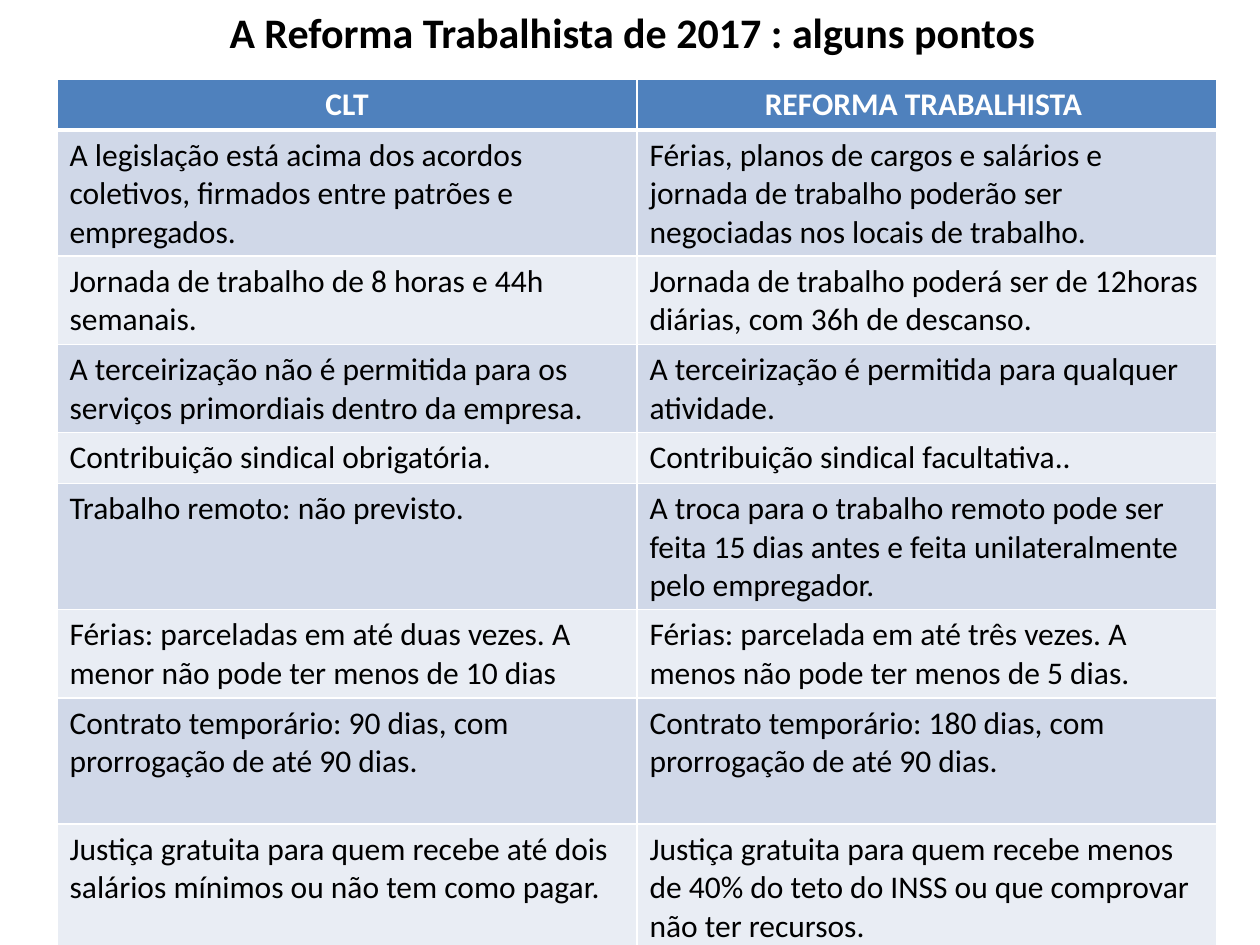
from lxml import etree
from pptx import Presentation
from pptx import util as u
from pptx.dml import color
from pptx.enum import text
from pptx.oxml import ns

PX_PER_INCH = 126
FONT = "Calibri"
WHITE, BLACK = "FFFFFF", "000000"
HEADER_FILL = "4F81BD"
BAND_FILLS = ["D0D8E8", "E9EDF4"]

TITLE = "A Reforma Trabalhista de 2017 : alguns pontos"
HEADERS = ("CLT", "REFORMA TRABALHISTA ")
HEADER_HEIGHT = 51
# Height in px, rule under the CLT, rule after the reform
RULES = [
    (126, "A legislação está acima dos acordos coletivos, firmados entre patrões e empregados.",
     "Férias, planos de cargos e salários e jornada de trabalho poderão ser negociadas nos locais de trabalho."),
    (88, "Jornada de trabalho de 8 horas e 44h semanais.",
     "Jornada de trabalho poderá ser de 12horas diárias, com 36h de descanso."),
    (88, "A terceirização não é permitida para os serviços primordiais dentro da empresa.",
     "A terceirização é permitida para qualquer atividade."),
    (51, "Contribuição sindical obrigatória.",
     "Contribuição sindical facultativa.."),
    (126, "Trabalho remoto: não previsto.",
     "A troca para o trabalho remoto pode ser feita 15 dias antes e feita unilateralmente pelo empregador."),
    (88, "Férias: parceladas em até duas vezes. A menor não pode ter menos de 10 dias",
     "Férias: parcelada em até três vezes. A menos não pode ter menos de 5 dias."),
    (126, "Contrato temporário: 90 dias, com prorrogação de até 90 dias.",
     "Contrato temporário: 180 dias, com prorrogação de até 90 dias."),
    (126, "Justiça gratuita para quem recebe até dois salários mínimos ou não tem como pagar.",
     "Justiça gratuita para quem recebe menos de 40% do teto do INSS ou que comprovar não ter recursos."),
]


def px(length):
    return u.Emu(round(length * u.Inches(1) / PX_PER_INCH))


def rgb(value):
    return color.RGBColor.from_string(value)


def format_paragraph(paragraph, size, ink, bold=False, centred=False):
    paragraph.alignment = text.PP_ALIGN.CENTER if centred else text.PP_ALIGN.LEFT
    font = paragraph.font
    font.name, font.size, font.bold = FONT, u.Pt(size), bold
    font.color.rgb = rgb(ink)


def set_borders(cell, bottom):
    """Draw white cell borders, 1 pt wide except for the bottom one."""
    properties = cell._tc.get_or_add_tcPr()
    for side, width in (("L", 1), ("R", 1), ("T", 1), ("B", bottom)):
        line = etree.SubElement(properties, ns.qn(f"a:ln{side}"), w=str(u.Pt(width)))
        fill = etree.SubElement(line, ns.qn("a:solidFill"))
        etree.SubElement(fill, ns.qn("a:srgbClr"), val=WHITE)


def format_cell(cell, content, fill, is_header):
    cell.text = content
    format_paragraph(cell.text_frame.paragraphs[0], 18,
                     WHITE if is_header else BLACK, is_header, is_header)
    set_borders(cell, bottom=3 if is_header else 1)
    cell.fill.solid()
    cell.fill.fore_color.rgb = rgb(fill)


def add_title(slide, left, top, width, height):
    title = slide.shapes.title
    title.left, title.top = px(left), px(top)
    title.width, title.height = px(width), px(height)
    frame = title.text_frame
    frame.text = TITLE
    frame.word_wrap = False
    frame.auto_size = text.MSO_AUTO_SIZE.SHAPE_TO_FIT_TEXT
    format_paragraph(frame.paragraphs[0], 24, BLACK, bold=True, centred=True)


def add_comparison_table(slide, left, top, width):
    rows = [(HEADER_HEIGHT, *HEADERS), *RULES]
    height = sum(row[0] for row in rows)
    table = slide.shapes.add_table(len(rows), len(HEADERS), px(left), px(top),
                                   px(width), px(height)).table
    for column in table.columns:
        column.width = px(width / len(HEADERS))
    for index, (row_height, *contents) in enumerate(rows):
        is_header = index == 0
        table.rows[index].height = px(row_height)
        fill = HEADER_FILL if is_header else BAND_FILLS[(index - 1) % 2]
        for cell, content in zip(table.rows[index].cells, contents):
            format_cell(cell, content, fill, is_header)


def main():
    presentation = Presentation()
    presentation.slide_width, presentation.slide_height = px(1260), px(945)
    slide = presentation.slides.add_slide(presentation.slide_layouts[5])
    add_title(slide, 213, 0, 839, 63)
    add_comparison_table(slide, 57, 79, 1160)
    presentation.save("out.pptx")


if __name__ == "__main__":
    main()
